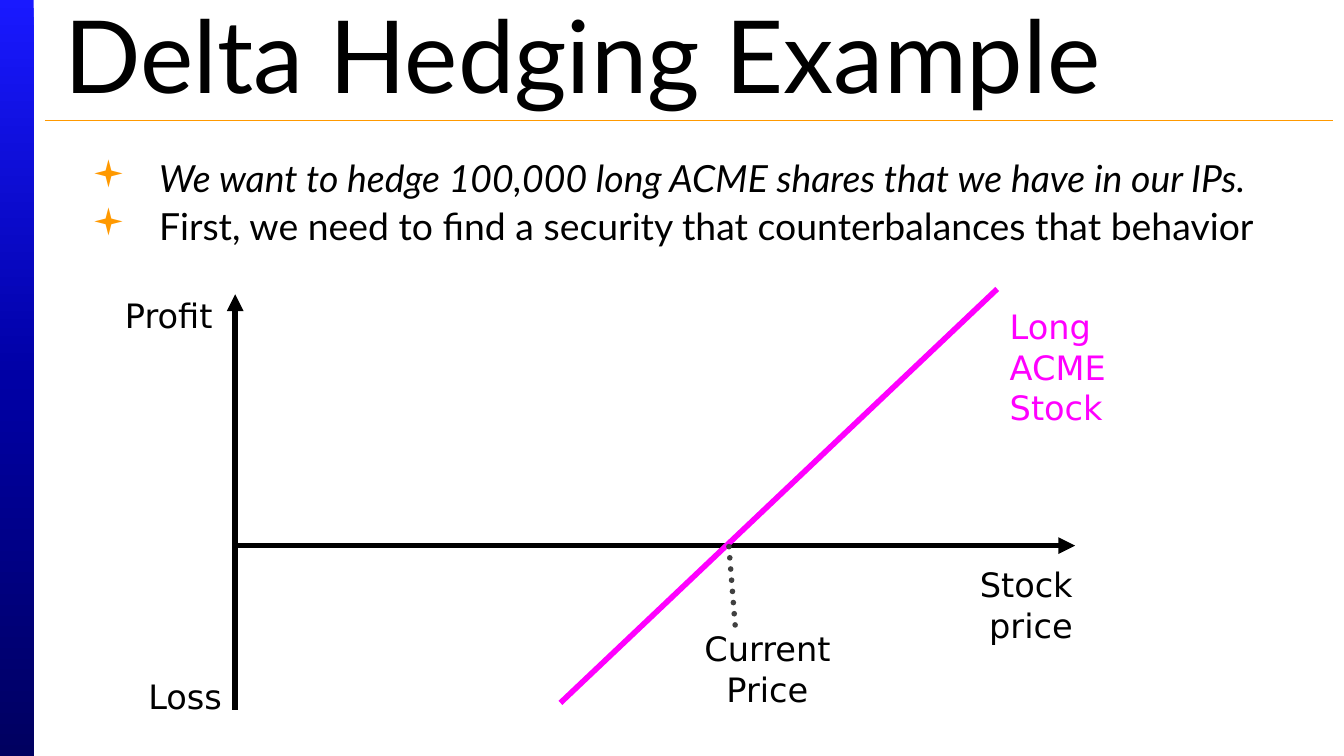
from lxml import etree
from pptx import Presentation
from pptx.dml.color import RGBColor
from pptx.enum.dml import MSO_LINE
from pptx.enum.shapes import MSO_CONNECTOR, MSO_SHAPE
from pptx.enum.text import MSO_ANCHOR, MSO_AUTO_SIZE, PP_ALIGN
from pptx.oxml import parse_xml
from pptx.oxml.ns import nsdecls, qn
from pptx.util import Pt

PX = 4572  # 200 px to the inch
WIDTH, HEIGHT = 2000, 1125
BLACK, ORANGE, MAGENTA, GRAY = "000000", "FF9900", "FF00FF", "404040"


def color(hex_string):
    return RGBColor.from_string(hex_string)


def px(*lengths):
    return [length * PX for length in lengths]


def format_runs(para, font, size, hex_string, italic=False):
    for span in para.runs:
        span.font.name = font
        span.font.size = Pt(size)
        span.font.italic = italic
        span.font.color.rgb = color(hex_string)


def add_line(page, start, end, hex_string, width=3, arrow=False, dotted=False):
    line = page.shapes.add_connector(MSO_CONNECTOR.STRAIGHT, *px(*start, *end))
    line.line.color.rgb = color(hex_string)
    line.line.width = Pt(width)
    outline = line.line._get_or_add_ln()
    if dotted:
        line.line.dash_style = MSO_LINE.ROUND_DOT
        outline.set("cap", "rnd")
    if arrow:
        etree.SubElement(outline, qn("a:tailEnd"), type="triangle")
    etree.SubElement(line._element.spPr, qn("a:effectLst"))


def add_label(page, box, text, align=PP_ALIGN.LEFT, hex_string=BLACK):
    label = page.shapes.add_textbox(*px(*box))
    label.text_frame.word_wrap = True
    label.text_frame.text = text
    para = label.text_frame.paragraphs[0]
    para.alignment = align
    format_runs(para, "DejaVu Sans", 18, hex_string)


def add_side_band(page, box):
    band = page.shapes.add_shape(MSO_SHAPE.RECTANGLE, *px(*box))
    band.shadow.inherit = False
    band.line.fill.background()
    stops = "".join(
        f'<a:gs pos="{percent * 1000}"><a:srgbClr val="{hex_string}"/></a:gs>'
        for percent, hex_string in [(0, "1919FF"), (50, "0000A5"), (100, "000060")]
    )
    gradient = parse_xml(
        f'<a:gradFill {nsdecls("a")}><a:gsLst>{stops}</a:gsLst>'
        '<a:lin ang="5400000" scaled="0"/></a:gradFill>'
    )
    band._element.spPr.find(qn("a:prstGeom")).addnext(gradient)


def add_title(page, box, text):
    title = page.shapes.title
    title.left, title.top, title.width, title.height = px(*box)
    frame = title.text_frame
    frame.text = text
    frame.auto_size = MSO_AUTO_SIZE.NONE
    frame.vertical_anchor = MSO_ANCHOR.MIDDLE
    frame.paragraphs[0].alignment = PP_ALIGN.LEFT
    format_runs(frame.paragraphs[0], "Lato", 54, BLACK)


def add_bullets(page, box, items):
    """Place bulleted lines given as (text, italic) pairs."""
    frame = page.shapes.add_textbox(*px(*box)).text_frame
    frame.word_wrap = True
    for index, (text, italic) in enumerate(items):
        para = frame.add_paragraph() if index else frame.paragraphs[0]
        para.text = text
        para.line_spacing = 0.9
        para.space_before = Pt(4 if index else 0)
        properties = para._p.get_or_add_pPr()
        properties.set("marL", str(100 * PX))
        properties.set("indent", str(-100 * PX))
        bullet_color = etree.SubElement(properties, qn("a:buClr"))
        etree.SubElement(bullet_color, qn("a:srgbClr"), val=ORANGE)
        etree.SubElement(properties, qn("a:buFont"), typeface="Wingdings")
        etree.SubElement(properties, qn("a:buChar"), char="▪")
        format_runs(para, "Lato", 20, BLACK, italic)


def add_payoff_chart(page, left, top):
    """Draw the profit and loss diagram from its top left corner."""
    def at(x, y):
        return left + x, top + y

    add_line(page, at(248, 628), at(248, 10), BLACK, arrow=True)
    add_line(page, at(248, 384), at(1498, 384), BLACK, arrow=True)
    add_label(page, (*at(1298, 402), 216, 142), "Stock price", PP_ALIGN.RIGHT)
    add_line(page, at(732, 618), at(1382, 2), MAGENTA)
    add_label(page, (*at(1381, 18), 300, 202), "Long ACME Stock", hex_string=MAGENTA)
    add_line(page, at(992, 502), at(982, 376), GRAY, dotted=True)
    add_label(page, (*at(898, 497), 284, 142), "Current Price", PP_ALIGN.CENTER)
    add_label(page, (*at(0, 1), 234, 80), "Profit", PP_ALIGN.RIGHT)
    add_label(page, (*at(14, 568), 234, 80), "Loss", PP_ALIGN.RIGHT)


def main():
    deck = Presentation()
    deck.slide_width, deck.slide_height = px(WIDTH, HEIGHT)
    page = deck.slides.add_slide(deck.slide_layouts[5])
    add_side_band(page, (0, 0, 50, HEIGHT))
    add_line(page, (67, 179), (1984, 179), ORANGE, width=0.75)
    add_title(page, (76, 29, 1916, 100), "Delta Hedging Example")
    add_bullets(page, (117, 229, 1883, 250), [
        ("We want to hedge 100,000 long ACME shares that we have in our IPs.", True),
        ("First, we need to find a security that counterbalances that behavior", False),
    ])
    add_payoff_chart(page, 102, 428)
    deck.save("out.pptx")


if __name__ == "__main__":
    main()
